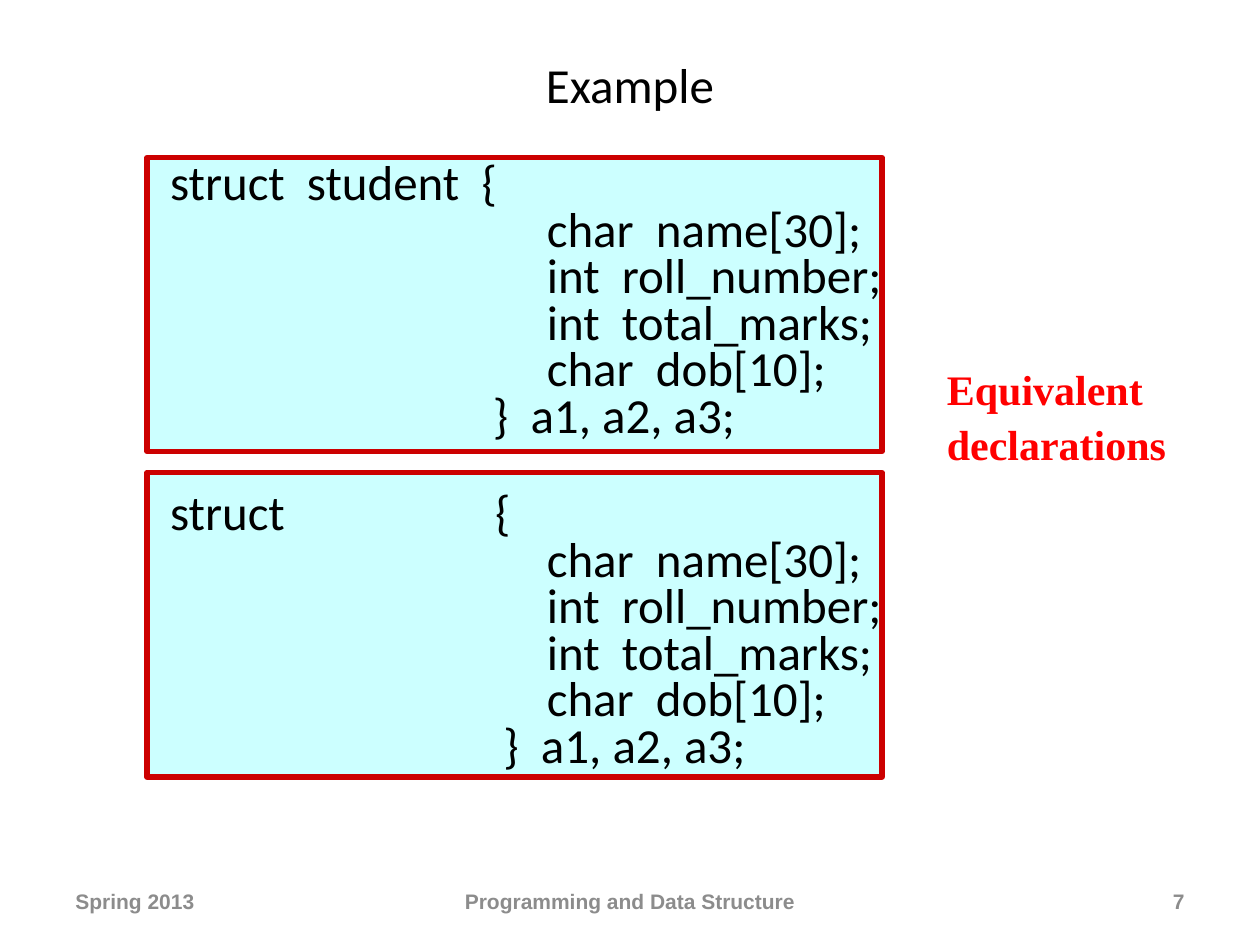
from pptx import Presentation
from pptx.dml.color import RGBColor
from pptx.enum.shapes import MSO_SHAPE
from pptx.enum.text import MSO_ANCHOR, PP_ALIGN
from pptx.oxml.ns import qn
from pptx.util import Pt
from lxml.etree import SubElement

COLORS = {"ink": "000000", "fill": "CCFFFF", "edge": "CC0000",
          "note": "FF0000", "foot": "8C8C8C"}
FIELDS = ["char  name[30];", "int  roll_number;",
          "int  total_marks;", "char  dob[10];"]
CLOSE = "}  a1, a2, a3;"


def rgb(name):
    return RGBColor.from_string(COLORS[name])


def style(para, face, size, color, bold=False):
    font = para.font
    font.name, font.size, font.bold = face, Pt(size), bold
    font.color.rgb = rgb(color)


def add_text(slide, box, lines, look, align=PP_ALIGN.LEFT,
             anchor=MSO_ANCHOR.MIDDLE, before=0):
    frame = slide.shapes.add_textbox(*map(Pt, box)).text_frame
    frame.word_wrap = True
    frame.vertical_anchor = anchor
    frame.text = "\n".join(lines)
    for para in frame.paragraphs:
        para.alignment = align
        para.space_before = Pt(before)
        style(para, *look)


def set_tab(para, pos):
    props = para._p.get_or_add_pPr()
    tabs = SubElement(props, qn("a:tabLst"))
    SubElement(tabs, qn("a:tab"), pos=str(Pt(pos)), algn="l")


def add_code(slide, box, head, inset, close, tab=None):
    """Draw a framed struct; close is the indent of its last line."""
    shape = slide.shapes.add_shape(MSO_SHAPE.RECTANGLE, *map(Pt, box))
    shape.shadow.inherit = False
    shape.fill.solid()
    shape.fill.fore_color.rgb = rgb("fill")
    shape.line.color.rgb = rgb("edge")
    shape.line.width = Pt(3)
    frame = shape.text_frame
    frame.word_wrap = False
    frame.vertical_anchor = MSO_ANCHOR.TOP
    frame.margin_left, frame.margin_top = Pt(13.2), Pt(inset)
    frame.margin_right = frame.margin_bottom = 0
    frame.text = "\n".join([head, *FIELDS, CLOSE])
    indents = [0] + [215.3] * len(FIELDS) + [close]
    for para, indent in zip(frame.paragraphs, indents):
        para.alignment = PP_ALIGN.LEFT
        para.line_spacing = 0.79
        para._p.get_or_add_pPr().set("marL", str(Pt(indent)))
        if tab and indent == 0:
            set_tab(para, tab)
        style(para, "Calibri", 28, "ink")


def add_footer(slide, top, height):
    parts = [(36, 168, "Spring 2013", PP_ALIGN.LEFT),
             (246, 228, "Programming and Data Structure", PP_ALIGN.CENTER),
             (516, 168, "7", PP_ALIGN.RIGHT)]
    for left, width, text, align in parts:
        add_text(slide, (left, top, width, height), [text],
                 ("Arial", 12, "foot", True), align)


def main():
    deck = Presentation()
    deck.slide_width, deck.slide_height = Pt(720), Pt(540)
    slide = deck.slides.add_slide(deck.slide_layouts[6])
    add_text(slide, (54, 24, 612, 48), ["Example"],
             ("Calibri", 28, "ink"), PP_ALIGN.CENTER)
    add_code(slide, (84, 90, 420, 168), "struct  student  {", 3.6, 184.5)
    add_code(slide, (84, 270, 420, 174), "struct\t{", 12.2, 190.5, 185.7)
    add_text(slide, (534, 204, 156, 68), ["Equivalent", "declarations"],
             ("Times New Roman", 24, "note", True),
             anchor=MSO_ANCHOR.TOP, before=3)
    add_footer(slide, 500.4, 28.8)
    deck.save("out.pptx")


if __name__ == "__main__":
    main()
